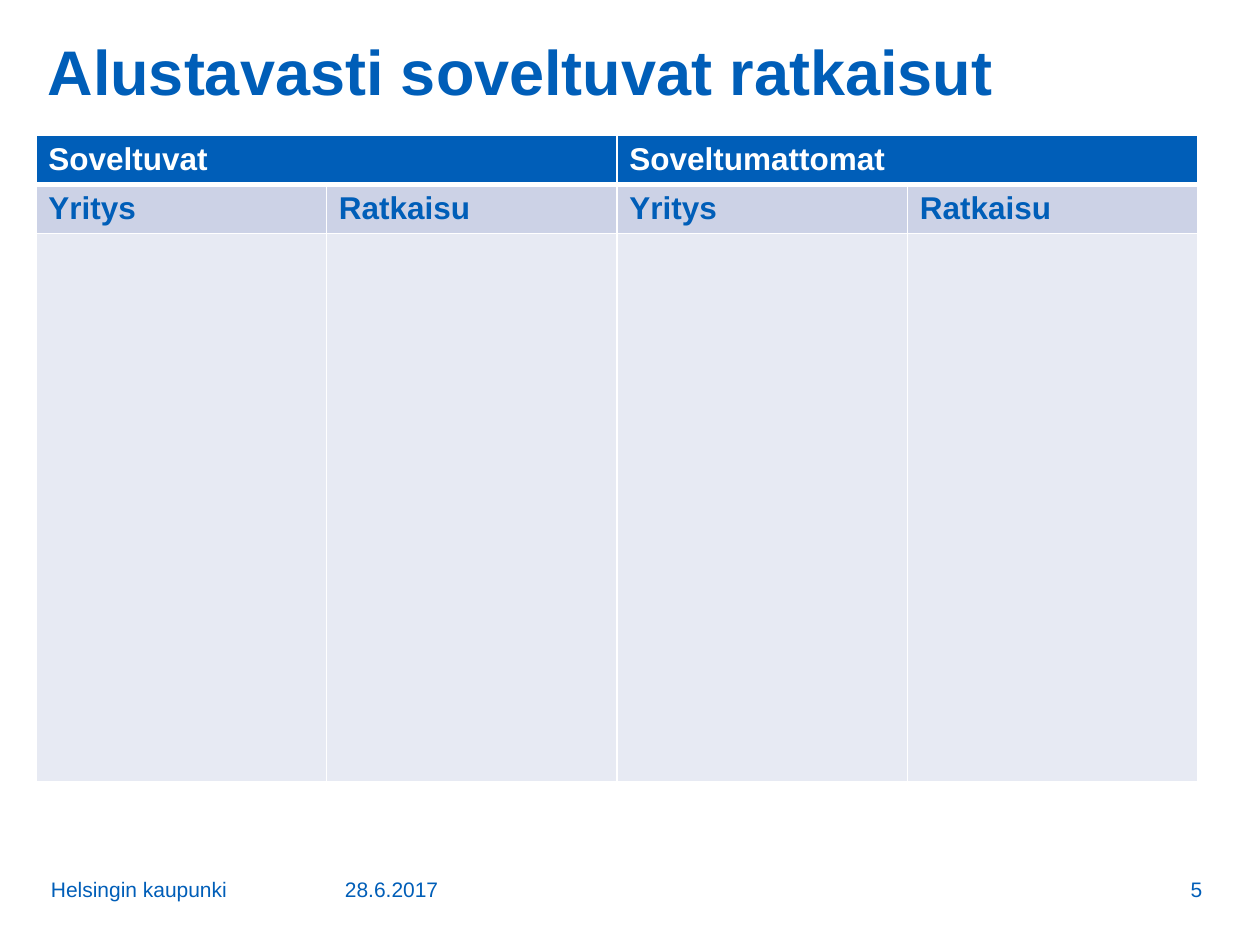
import pptx
import pptx.util
import pptx.dml.color
import pptx.enum.text
import pptx.oxml
import pptx.oxml.ns
from pptx.util import Pt

BLUE, WHITE, BAND, PALE = "005EB8", "FFFFFF", "CCD2E6", "E7EAF3"
TITLE = "Alustavasti soveltuvat ratkaisut"
GROUPS = ["Soveltuvat", "Soveltumattomat"]
FIELDS = ["Yritys", "Ratkaisu"]
FOOT = [  # text, left, top, width, height, align
    ("28.6.2017", 190, 491, 112, 28, "LEFT"),
    ("Helsingin kaupunki", 22, 482, 168, 37, "LEFT"),
    ("5", 609, 491, 85, 28, "RIGHT"),
]
LEFT, TOP, COL = 20.5, 77.5, 166
ROWS = [28, 28, 313]
FILLS = [BLUE, BAND, PALE]
INKS = [WHITE, BLUE, BLUE]


def color(code):
    return pptx.dml.color.RGBColor.from_string(code)


def write(frame, text, size, ink, bold=False):
    para = frame.paragraphs[0]
    run = para.add_run()
    run.text = text
    font = run.font
    font.name, font.size, font.bold = "Arial", Pt(size), bold
    font.color.rgb = color(ink)
    return para


def edge(cell, side, width):
    """Draw a white border on one side (L, R, T or B) of a cell."""
    line = pptx.oxml.parse_xml(
        f'<a:ln{side} {pptx.oxml.ns.nsdecls("a")} w="{Pt(width)}"><a:solidFill>'
        f'<a:srgbClr val="{WHITE}"/></a:solidFill></a:ln{side}>')
    cell._tc.get_or_add_tcPr().append(line)


def add_title(slide):
    title = slide.shapes.title
    title.left, title.top, title.width, title.height = Pt(20), Pt(18), Pt(664), Pt(54)
    frame = title.text_frame
    frame.vertical_anchor = pptx.enum.text.MSO_ANCHOR.TOP
    frame.margin_top = Pt(7.2)
    para = write(frame, TITLE, 36, BLUE, True)
    para.alignment = pptx.enum.text.PP_ALIGN.LEFT
    para.line_spacing = 0.85


def add_grid(slide):
    heads = [text for group in GROUPS for text in (group, "")]
    cells = [heads, FIELDS * len(GROUPS), [""] * len(heads)]
    table = slide.shapes.add_table(len(ROWS), len(heads), Pt(LEFT), Pt(TOP),
                                   Pt(COL * len(heads)), Pt(sum(ROWS))).table
    for col in table.columns:
        col.width = Pt(COL)
    for r, texts in enumerate(cells):
        table.rows[r].height = Pt(ROWS[r])
        for c, text in enumerate(texts):
            cell = table.cell(r, c)
            for side in "LRTB":
                thick = (r, side) in ((0, "B"), (1, "T"))
                edge(cell, side, 3 if thick else 1)
            cell.fill.solid()
            cell.fill.fore_color.rgb = color(FILLS[r])
            if text:
                write(cell.text_frame, text, 18, INKS[r], True)
    for c in range(0, len(heads), len(FIELDS)):
        table.cell(0, c).merge(table.cell(0, c + len(FIELDS) - 1))


def add_foot(slide):
    for text, left, top, width, height, align in FOOT:
        box = slide.shapes.add_textbox(Pt(left), Pt(top), Pt(width), Pt(height))
        frame = box.text_frame
        frame.word_wrap = True
        frame.vertical_anchor = pptx.enum.text.MSO_ANCHOR.BOTTOM
        para = write(frame, text, 12, BLUE)
        para.alignment = pptx.enum.text.PP_ALIGN[align]


def main():
    deck = pptx.Presentation()
    deck.slide_width, deck.slide_height = Pt(720), Pt(540)
    slide = deck.slides.add_slide(deck.slide_layouts[5])
    add_title(slide)
    add_grid(slide)
    add_foot(slide)
    deck.save("out.pptx")


if __name__ == "__main__":
    main()
